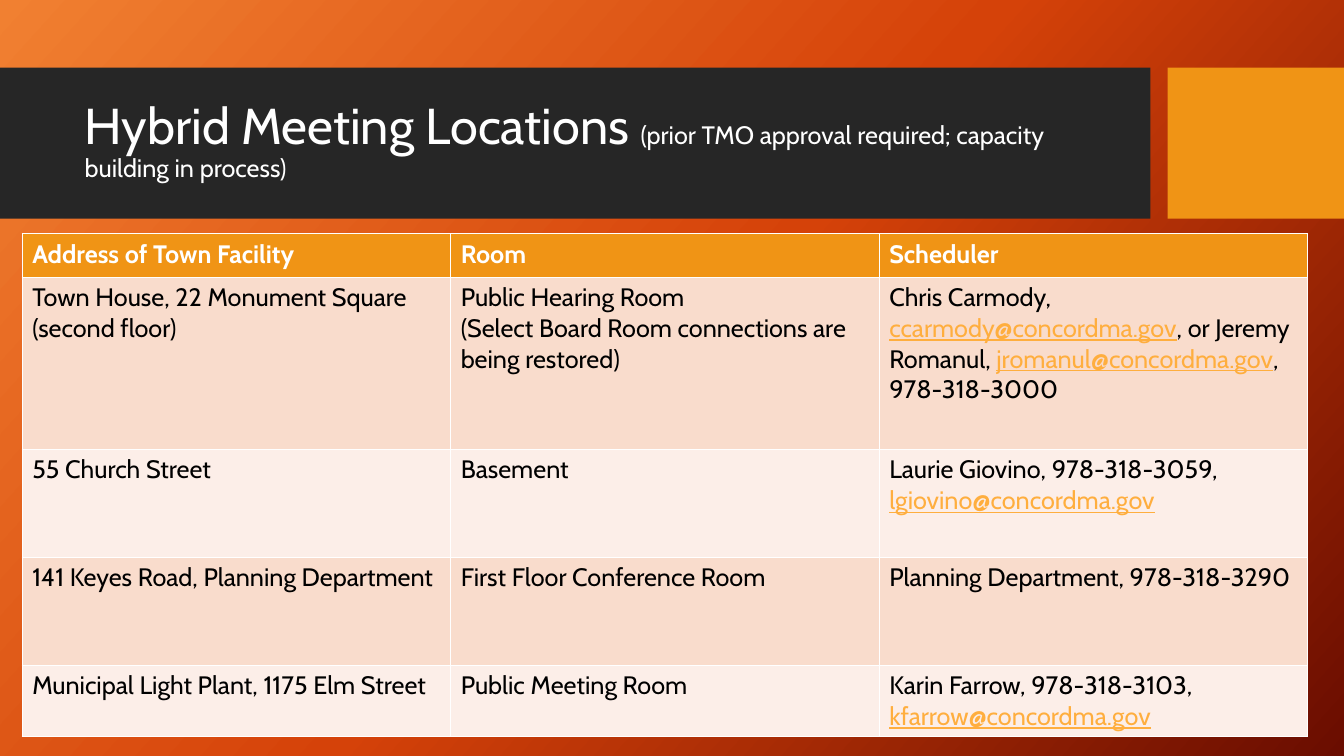
"""Build the slide that lists hybrid meeting locations and their schedulers."""
from copy import deepcopy

from pptx import Presentation
from pptx.dml.color import RGBColor
from pptx.enum.shapes import MSO_SHAPE
from pptx.enum.text import MSO_ANCHOR, MSO_AUTO_SIZE, PP_ALIGN
from pptx.oxml.ns import qn
from pptx.util import Inches, Pt

RECTANGLE = MSO_SHAPE.RECTANGLE
MIDDLE = MSO_ANCHOR.MIDDLE
NO_AUTOFIT = MSO_AUTO_SIZE.NONE
LEFT = PP_ALIGN.LEFT

FONT = "Cabin"
WHITE = RGBColor(0xFF, 0xFF, 0xFF)
BLACK = RGBColor(0x00, 0x00, 0x00)
CHARCOAL = RGBColor(0x26, 0x26, 0x26)
ORANGE = RGBColor(0xF0, 0x94, 0x15)
EMAIL_ORANGE = RGBColor(0xFF, 0xAE, 0x3E)
DARK_ROW = RGBColor(0xF9, 0xDC, 0xCC)
LIGHT_ROW = RGBColor(0xFC, 0xEE, 0xE8)
GRADIENT = [
    (0, RGBColor(0xF1, 0x80, 0x31)),
    (0.5, RGBColor(0xD5, 0x42, 0x09)),
    (1, RGBColor(0x6A, 0x0D, 0x00)),
]

TITLE_PARTS = [
    ("Hybrid Meeting Locations ", 36),
    ("(prior TMO approval required; capacity building in process)", 18),
]
ROW_HEIGHTS = [0.43, 1.71, 1.07, 1.07, 0.43]
LOCATIONS = [
    ["Address of Town Facility", "Room", "Scheduler"],
    [
        "Town House, 22 Monument Square (second floor)",
        "Public Hearing Room\n(Select Board Room connections are being restored)",
        "Chris Carmody, |ccarmody@concordma.gov|, or Jeremy Romanul, "
        "|jromanul@concordma.gov|, 978-318-3000",
    ],
    ["55 Church Street", "Basement", "Laurie Giovino, 978-318-3059, |lgiovino@concordma.gov"],
    [
        "141 Keyes Road, Planning Department",
        "First Floor Conference Room",
        "Planning Department, 978-318-3290",
    ],
    [
        "Municipal Light Plant, 1175 Elm Street",
        "Public Meeting Room",
        "Karin Farrow, 978-318-3103, |kfarrow@concordma.gov",
    ],
]


def add_styled_run(paragraph, text, size, color):
    run = paragraph.add_run()
    run.text = text
    run.font.name = FONT
    run.font.size = Pt(size)
    run.font.color.rgb = color
    return run


presentation = Presentation()
presentation.slide_width = Inches(13.33)
presentation.slide_height = Inches(7.5)
slide = presentation.slides.add_slide(presentation.slide_layouts[5])

background = slide.background.fill
background.gradient()
background.gradient_angle = 360 - 42
stop_list = slide.element.find(".//" + qn("a:gsLst"))
stop_list.append(deepcopy(stop_list[-1]))
for stop, (position, color) in zip(background.gradient_stops, GRADIENT):
    stop.position = position
    stop.color.rgb = color

for left, width, color in [(0, 11.41, CHARCOAL), (11.58, 1.75, ORANGE)]:
    band = slide.shapes.add_shape(RECTANGLE, Inches(left), Inches(0.67), Inches(width), Inches(1.5))
    band.shadow.inherit = False
    band.fill.solid()
    band.fill.fore_color.rgb = color
    band.line.fill.background()

title = slide.shapes.title
title.left, title.top = Inches(0.74), Inches(0.82)
title.width, title.height = Inches(10.51), Inches(1.18)
slide.shapes.element.append(title.element)
title.text_frame.word_wrap = True
title.text_frame.auto_size = NO_AUTOFIT
title.text_frame.vertical_anchor = MIDDLE
heading = title.text_frame.paragraphs[0]
heading.alignment = LEFT
heading.line_spacing = 0.9
for text, size in TITLE_PARTS:
    add_styled_run(heading, text, size, WHITE)

table = slide.shapes.add_table(
    len(LOCATIONS), 3, Inches(0.22), Inches(2.32), Inches(12.75), Inches(sum(ROW_HEIGHTS))
).table
for column in table.columns:
    column.width = Inches(4.25)

for row_index, (height, texts) in enumerate(zip(ROW_HEIGHTS, LOCATIONS)):
    table.rows[row_index].height = Inches(height)
    is_header = row_index == 0
    row_fill = ORANGE if is_header else DARK_ROW if row_index % 2 else LIGHT_ROW
    for column_index, text in enumerate(texts):
        cell = table.cell(row_index, column_index)
        cell.fill.solid()
        cell.fill.fore_color.rgb = row_fill
        for line_index, line in enumerate(text.split("\n")):
            text_frame = cell.text_frame
            paragraph = text_frame.add_paragraph() if line_index else text_frame.paragraphs[0]
            for part in line.split("|"):
                is_email = "@" in part
                color = WHITE if is_header else EMAIL_ORANGE if is_email else BLACK
                run = add_styled_run(paragraph, part, 18, color)
                run.font.bold = is_header
                run.font.underline = is_email

presentation.save("out.pptx")
